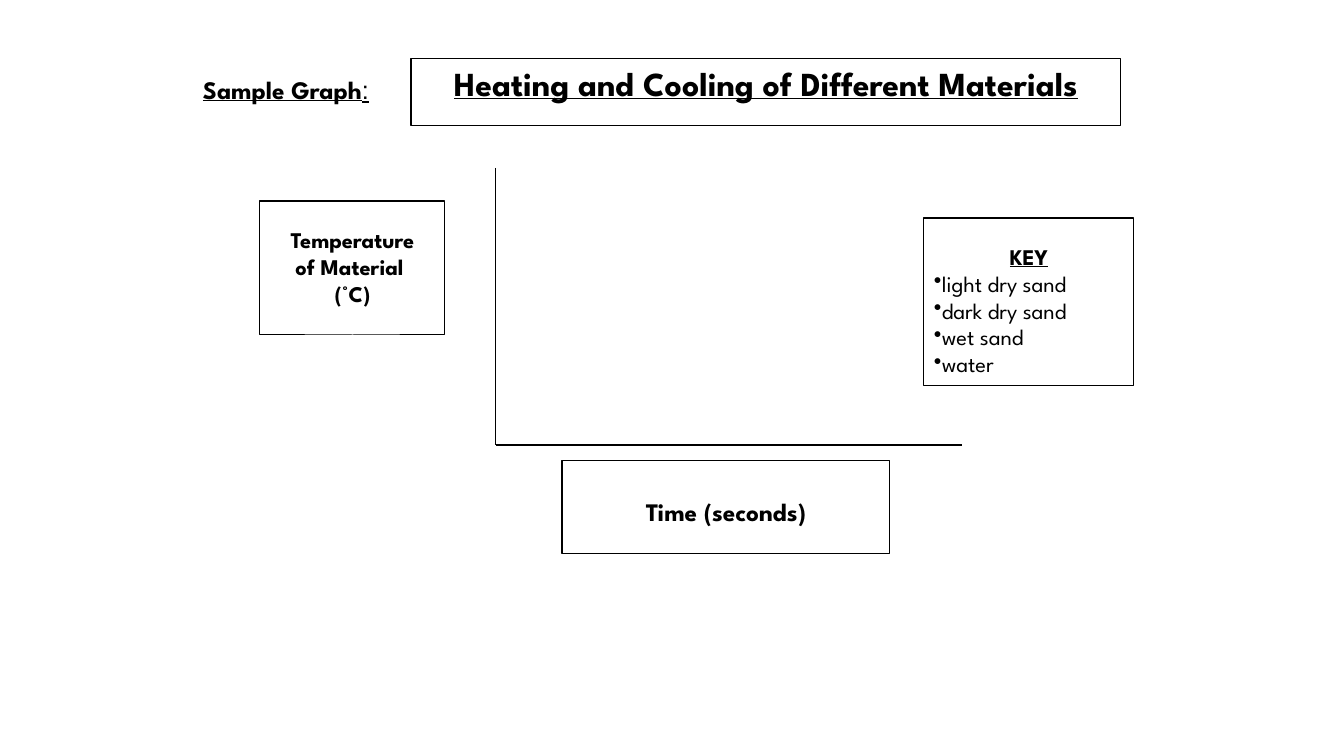
import collections
import dataclasses
import lxml.etree
import pptx
import pptx.dml.color
import pptx.enum.shapes
import pptx.enum.text
import pptx.oxml.ns
import pptx.util

Box = collections.namedtuple("Box", "left top width height")
Span = collections.namedtuple("Span", "text size bold underline font")
ALIGN = pptx.enum.text.PP_ALIGN


@dataclasses.dataclass(frozen=True)
class Theme:
    ink: pptx.dml.color.RGBColor = pptx.dml.color.RGBColor(0, 0, 0)
    paper: pptx.dml.color.RGBColor = pptx.dml.color.RGBColor(255, 255, 255)
    font: str = "League Spartan"
    plain_font: str = "Arial"
    title: int = 24
    heading: int = 18
    label: int = 16
    rule: float = 0.75


THEME = Theme()


def px(count):
    return pptx.util.Emu(round(count * 914400 / 100.8))


def within(box, left, top, width, height):
    return Box(box.left + left, box.top + top, width, height)


def span(text, size=THEME.label, bold=True, underline=False, font=THEME.font):
    return Span(text, size, bold, underline, font)


def write(frame, paras, top_inset, align):
    frame.word_wrap = True
    frame.vertical_anchor = pptx.enum.text.MSO_ANCHOR.TOP
    frame.margin_left = frame.margin_right = px(10)
    frame.margin_top, frame.margin_bottom = px(top_inset), px(5)
    for index, spans in enumerate(paras):
        para = frame.paragraphs[0] if index == 0 else frame.add_paragraph()
        para.alignment = align
        for item in spans:
            run = para.add_run()
            run.text = item.text
            run.font.name = item.font
            run.font.size = pptx.util.Pt(item.size)
            run.font.bold = item.bold
            run.font.underline = item.underline
            run.font.color.rgb = THEME.ink


def draw_panel(page, box, paras, top_inset):
    panel = page.shapes.add_shape(
        pptx.enum.shapes.MSO_SHAPE.RECTANGLE, *map(px, box))
    panel.shadow.inherit = False
    panel.fill.solid()
    panel.fill.fore_color.rgb = THEME.paper
    panel.line.color.rgb = THEME.ink
    panel.line.width = pptx.util.Pt(THEME.rule)
    write(panel.text_frame, paras, top_inset, ALIGN.CENTER)
    return panel


def draw_axis(page, start, end):
    axis = page.shapes.add_connector(
        pptx.enum.shapes.MSO_CONNECTOR.STRAIGHT, *map(px, start + end))
    axis.line.color.rgb = THEME.ink
    axis.line.width = pptx.util.Pt(THEME.rule)
    lxml.etree.SubElement(
        axis._element.spPr, pptx.oxml.ns.qn("a:effectLst"))


def draw_header(page, box):
    caption = page.shapes.add_textbox(
        *map(px, within(box, 0, 0, 206, box.height)))
    write(caption.text_frame, [[
        span("Sample Graph", THEME.heading, underline=True),
        span(":", THEME.heading, False, True, THEME.plain_font),
    ]], 24, ALIGN.LEFT)
    title = span("Heating and Cooling of Different Materials",
                 THEME.title, underline=True)
    draw_panel(page, within(box, 218, 8, box.width - 218, 68), [[title]], 5)


def draw_graph(page, box):
    origin = (box.left + 236, box.top + 277)
    draw_axis(page, origin, (box.left + box.width, origin[1]))
    draw_axis(page, (origin[0], box.top), origin)
    lines = ["Temperature", "of Material ", "(°C)"]
    draw_panel(page, within(box, 0, 33, 185, 134),
               [[span(line)] for line in lines], 25)
    draw_panel(page, within(box, 302, 293, 328, 93),
               [[span("Time (seconds)", THEME.heading)]], 35)


def draw_key(page, box, materials):
    paras = [[span("KEY", underline=True)]]
    paras += [[span(name, bold=False)] for name in materials]
    panel = draw_panel(page, box, paras, 25)
    for para in panel.text_frame.paragraphs[1:]:
        para.alignment = ALIGN.LEFT
        settings = para._p.get_or_add_pPr()
        settings.set("marL", "0")
        settings.set("indent", "0")
        bullet = lxml.etree.SubElement(
            settings, pptx.oxml.ns.qn("a:buChar"))
        bullet.set("char", "•")


def main():
    deck = pptx.Presentation()
    deck.slide_width, deck.slide_height = px(1344), px(756)
    page = deck.slides.add_slide(deck.slide_layouts[6])
    draw_header(page, Box(193, 50, 928, 90))
    draw_graph(page, Box(260, 168, 702, 386))
    draw_key(page, Box(924, 218, 210, 168),
             ["light dry sand", "dark dry sand", "wet sand", "water"])
    deck.save("out.pptx")


if __name__ == "__main__":
    main()
